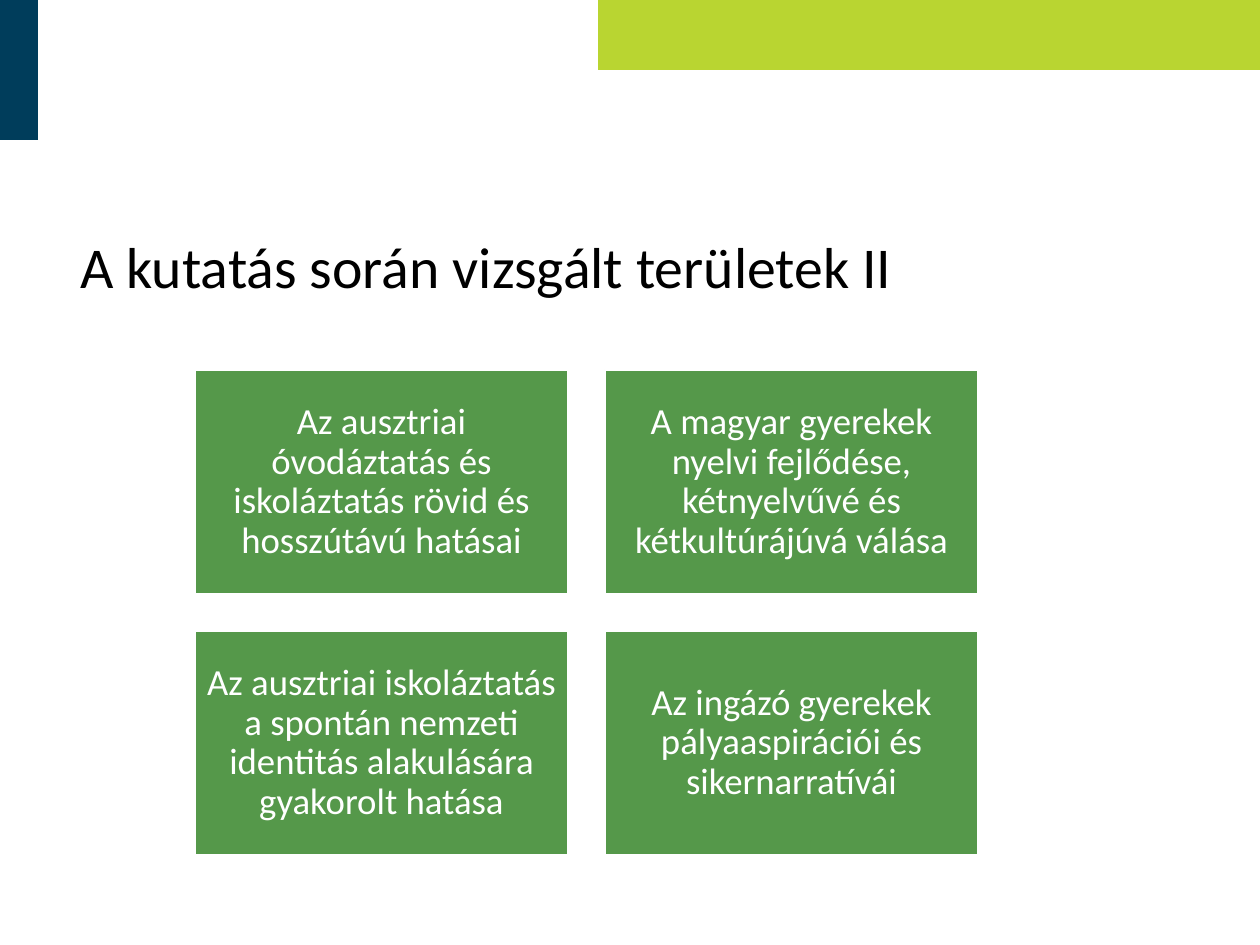
from pptx import Presentation
from pptx import util as u
from pptx.dml.color import RGBColor
from pptx.enum import shapes, text

PX = 914400 / 126  # EMU in one px
HUES = {"lime": "B9D531", "navy": "003D5B", "green": "55984A",
        "white": "FFFFFF", "black": "000000"}
TOPICS = [
    "Az ausztriai óvodáztatás és iskoláztatás rövid és hosszútávú hatásai",
    "A magyar gyerekek nyelvi fejlődése, kétnyelvűvé és kétkultúrájúvá válása",
    "Az ausztriai iskoláztatás a spontán nemzeti identitás alakulására gyakorolt hatása",
    "Az ingázó gyerekek pályaaspirációi és sikernarratívái",
]


def px(n):
    return u.Emu(round(n * PX))


def hue(name):
    return RGBColor.from_string(HUES[name])


def put(item, form):
    for key, value in form.items():
        setattr(item, key, value)


def block(slide, box, fill, edge=None):
    shape = slide.shapes.add_shape(shapes.MSO_SHAPE.RECTANGLE, *map(px, box))
    shape.shadow.inherit = False
    shape.fill.solid()
    shape.fill.fore_color.rgb = hue(fill)
    if edge:
        shape.line.color.rgb = hue(edge)
        shape.line.width = u.Pt(1)
    else:
        shape.line.fill.background()
    return shape


def write(shape, words, size, color, align, inset):
    frame = shape.text_frame
    put(frame, {"word_wrap": True,
                "vertical_anchor": text.MSO_ANCHOR.MIDDLE,
                **{f"margin_{side}": px(n) for side, n in inset.items()}})
    para = frame.paragraphs[0]
    para.text = words
    put(para, {"alignment": align, "line_spacing": 0.9})
    put(para.font, {"name": "Calibri", "size": u.Pt(size)})
    para.font.color.rgb = hue(color)


def bars(slide, box):
    left, top, width, height = box
    block(slide, (left + 598, top, width - 598, 70), "lime")
    block(slide, (left - 1, top, 39, 140), "navy")


def title(slide, box, words):
    shape = slide.shapes.add_textbox(*map(px, box))
    write(shape, words, 33, "black", text.PP_ALIGN.LEFT,
          {"left": 12, "right": 12, "top": 6, "bottom": 6})


def tiles(slide, box, words, cols=2, gap=37):
    left, top, width, height = box
    rows = len(words) // cols
    wide = (width - gap * (cols - 1)) // cols
    high = (height - gap * (rows - 1)) // rows
    for i, topic in enumerate(words):
        row, col = divmod(i, cols)
        cell = (left + col * (wide + gap), top + row * (high + gap), wide, high)
        tile = block(slide, cell, "green", "white")
        write(tile, topic, 21, "white", text.PP_ALIGN.CENTER,
              dict.fromkeys(("left", "right", "top", "bottom"), 11))


def main():
    deck = Presentation()
    put(deck, {"slide_width": px(1260), "slide_height": px(945)})
    slide = deck.slides.add_slide(deck.slide_layouts[6])
    # Corner bars
    bars(slide, (0, 0, 1260, 945))
    # Heading
    title(slide, (68, 178, 1038, 183), "A kutatás során vizsgált területek II")
    # Grid of research topics
    tiles(slide, (195, 370, 783, 485), TOPICS)
    deck.save("out.pptx")


if __name__ == "__main__":
    main()
